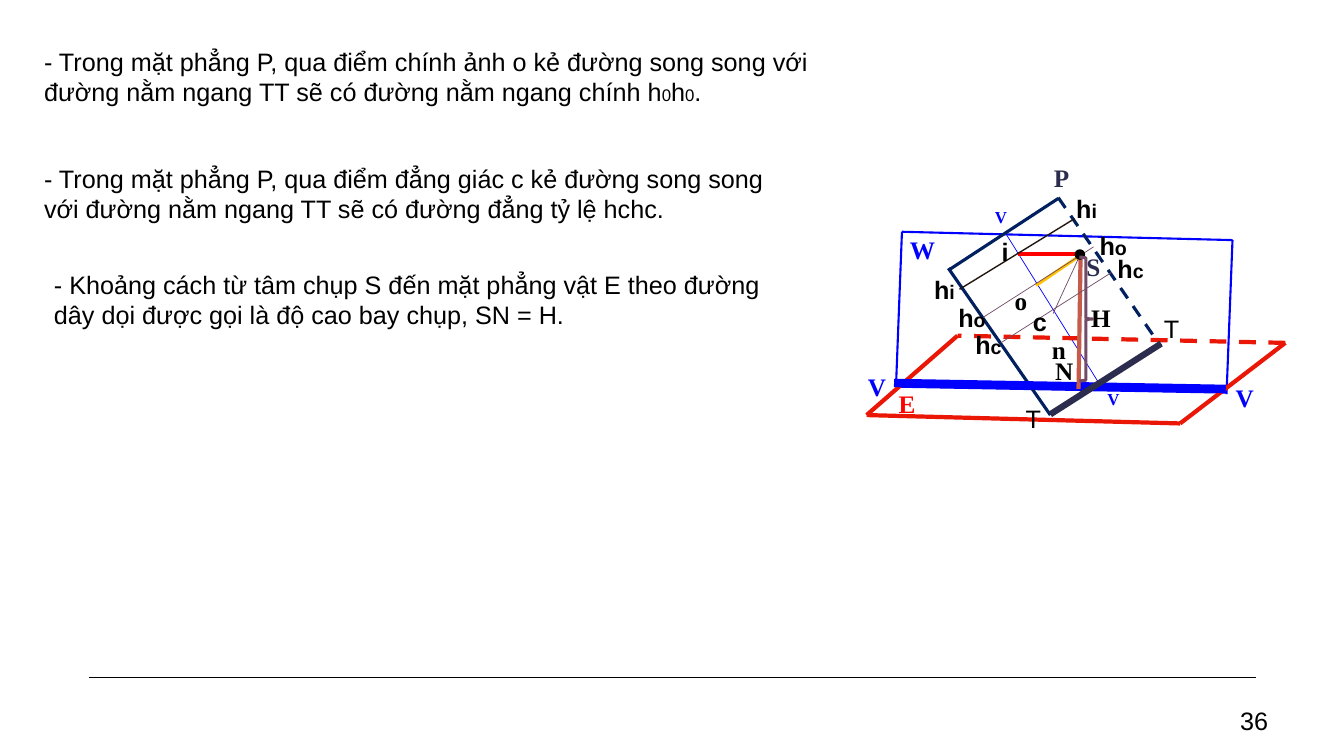
from dataclasses import dataclass

from lxml import etree
from pptx import Presentation
from pptx.dml.color import RGBColor
from pptx.enum.dml import MSO_LINE
from pptx.enum.shapes import MSO_CONNECTOR, MSO_SHAPE
from pptx.enum.text import MSO_ANCHOR, PP_ALIGN
from pptx.oxml.ns import qn
from pptx.util import Cm, Pt

STRAIGHT = MSO_CONNECTOR.STRAIGHT
DASH = MSO_LINE.DASH
OVAL = MSO_SHAPE.OVAL
RIGHT_BRACE = MSO_SHAPE.RIGHT_BRACE
MIDDLE = MSO_ANCHOR.MIDDLE
LEFT, RIGHT = PP_ALIGN.LEFT, PP_ALIGN.RIGHT


@dataclass(frozen=True)
class Theme:
    """Colours, fonts and type sizes of the slide."""
    black: str = "000000"
    blue: str = "0000FF"
    red: str = "FF0000"
    ground: str = "EA1606"
    navy: str = "002060"
    slate: str = "2C2C4E"
    plum: str = "734B67"
    brown: str = "211710"
    rust: str = "C55C4B"
    gold: str = "FFC000"
    sans: str = "Arial"
    serif: str = "Times New Roman"
    body: int = 18
    suffix: int = 14
    small: int = 12


THEME = Theme()


def rgb(colour):
    """Return a colour object for a hex string."""
    return RGBColor.from_string(colour)


def add_line(slide, origin, ends, colour, weight, dash=None):
    """Draw a straight line between two points measured from the origin."""
    (left, top), (x1, y1, x2, y2) = origin, ends
    line = slide.shapes.add_connector(
        STRAIGHT, Cm(left + x1), Cm(top + y1), Cm(left + x2), Cm(top + y2))
    line.line.color.rgb = rgb(colour)
    line.line.width = Pt(weight)
    if dash:
        line.line.dash_style = dash
    etree.SubElement(line._element.spPr, qn("a:effectLst"))


def add_text(slide, box, runs, font=THEME.sans, colour=THEME.black,
             bold=False, wrap=True, align=LEFT):
    """Write one paragraph made of (text, size) runs and return its frame."""
    frame = slide.shapes.add_textbox(*map(Cm, box)).text_frame
    frame.word_wrap = wrap
    paragraph = frame.paragraphs[0]
    paragraph.alignment = align
    paragraph.font.name = font
    paragraph.font.bold = bold
    paragraph.font.color.rgb = rgb(colour)
    sizes = {size for _, size in runs}
    if len(sizes) == 1:
        paragraph.font.size = Pt(sizes.pop())
    for text, size in runs:
        run = paragraph.add_run()
        run.text = text
        if len(runs) > 1:
            run.font.size = Pt(size)
    return frame


def add_explanations(slide, left, top):
    """Place the three explanations down the left side."""
    body, small = THEME.body, THEME.small
    explanations = [
        (0, 0, 19.86, [
            ("- Trong mặt phẳng P, qua điểm chính ảnh o kẻ đường song song với "
             "đường nằm ngang TT sẽ có đường nằm ngang chính h", body),
            ("0", small), ("h", body), ("0", small), (".", body)]),
        (0, 2.95, 18.9, [
            ("- Trong mặt phẳng P, qua điểm đẳng giác c kẻ đường song song với "
             "đường nằm ngang TT sẽ có đường đẳng tỷ lệ hchc.", body)]),
        (0.25, 5.61, 18.64, [
            ("- Khoảng cách từ tâm chụp S đến mặt phẳng vật E theo đường "
             "dây dọi được gọi là độ cao bay chụp, SN = H.", body)]),
    ]
    for x, y, width, runs in explanations:
        add_text(slide, (left + x, top + y, width, 1.8), runs)


def add_projection_lines(slide, origin):
    """Draw the planes W, E and P with the rays between them."""
    t = THEME
    vertical_plane = [
        ((1.13, 1.94, 0.98, 5.83), t.blue, 1.5),
        ((9.46, 2.15, 9.31, 6.03), t.blue, 1.5),
        ((1.13, 1.94, 9.46, 2.15), t.blue, 1.5),
        ((0.98, 5.83, 9.31, 5.98), t.blue, 2.25),
        ((3.75, 1.99, 6.14, 5.83), t.blue, 0.5),
    ]
    ground_plane = [
        ((2.53, 4.56, 0.24, 6.56), t.ground, 3),
        ((8.14, 6.77, 0.24, 6.56), t.ground, 3),
        ((8.14, 6.77, 10.79, 4.74), t.ground, 3),
        ((10.79, 4.74, 2.53, 4.56), t.ground, 3, DASH),
    ]
    image_plane = [
        ((2.3, 2.86, 4.87, 6.56), t.navy, 2.25),
        ((2.3, 2.91, 5.07, 1.1), t.navy, 2.25),
        ((4.89, 6.56, 7.66, 4.76), t.navy, 2.25),
        ((5.07, 1.08, 7.64, 4.81), t.navy, 2.25, DASH),
    ]
    traces = [
        ((0.93, 5.75, 9.29, 5.9), t.blue, 6),
        ((4.87, 6.54, 7.66, 4.76), t.slate, 4.5),
    ]
    rays = [
        ((5.53, 2.6, 4.51, 3.29), t.gold, 2.25),
        ((5.63, 2.63, 5.58, 5.9), t.rust, 3),
        ((4.05, 2.5, 5.73, 2.5), t.red, 2.25),
        ((5.63, 2.5, 4.94, 4), t.plum, 0.5),
    ]
    horizontals = [
        ((2.58, 3.39, 5.48, 1.61), t.brown, 1),
        ((3.17, 4.1, 5.96, 2.32), t.plum, 0.5),
        ((3.62, 4.74, 6.42, 2.96), t.plum, 0.5),
    ]
    for part in (vertical_plane, ground_plane, image_plane, traces, rays, horizontals):
        for line in part:
            add_line(slide, origin, *line)


def add_projection_labels(slide, origin):
    """Name the planes, points and lines of the drawing."""
    t = THEME
    left, top = origin
    letters = [
        ("W", 1.08, 1.87, 1.14, t.serif, t.blue, True, t.body),
        ("V", 3.22, 1.18, 0.81, t.serif, t.blue, True, t.small),
        ("V", 6.06, 5.78, 0.81, t.serif, t.blue, True, t.small),
        ("V", 9.29, 5.6, 0.97, t.serif, t.blue, True, t.body),
        ("V", 0.02, 5.32, 0.97, t.serif, t.blue, True, t.body),
        ("E", 0.8, 5.75, 0.94, t.serif, t.red, True, t.body),
        ("P", 4.71, 0.06, 0.94, t.serif, t.slate, True, t.body),
        ("S", 5.53, 2.32, 0.86, t.serif, t.slate, True, t.body),
        ("T", 7.48, 3.87, 0.94, t.sans, t.black, False, t.body),
        ("T", 4, 6.13, 0.94, t.sans, t.black, False, t.body),
        ("o", 3.72, 3.16, 0.84, t.serif, t.black, True, t.body),
        ("n", 4.66, 4.41, 0.86, t.serif, t.black, True, t.body),
        ("H", 5.65, 3.59, 1.02, t.serif, t.black, True, t.body),
        ("N", 4.74, 4.94, 0.97, t.serif, t.black, True, t.body),
        ("i", 3.39, 1.92, 0.69, t.sans, t.black, True, t.body),
        ("c", 4.18, 3.69, 0.86, t.sans, t.black, True, t.body),
    ]
    for letter, x, y, width, font, colour, bold, size in letters:
        height = 1.02 if size == t.body else 0.76
        add_text(slide, (left + x, top + y, width, height), [(letter, size)],
                 font, colour, bold, wrap=False)

    horizontal_ends = [
        ("i", 1.04, (1.69, 2.88), (5.27, 0.85)),
        ("o", 1.2, (2.3, 3.59), (5.86, 1.79)),
        ("c", 1.17, (2.73, 4.28), (6.31, 2.35)),
    ]
    for suffix, width, *ends in horizontal_ends:
        for x, y in ends:
            add_text(slide, (left + x, top + y, width, 1.02),
                     [("h", t.body), (suffix, t.suffix)], bold=True, wrap=False)


def add_projection(slide, left, top):
    """Draw the projection diagram with its centre, height brace and labels."""
    origin = left, top
    add_projection_lines(slide, origin)

    centre = slide.shapes.add_shape(
        OVAL, Cm(left + 5.5), Cm(top + 2.4), Cm(0.23), Cm(0.23))
    centre.fill.solid()
    centre.fill.fore_color.rgb = rgb(THEME.black)
    flight_height = slide.shapes.add_shape(
        RIGHT_BRACE, Cm(left + 5.6), Cm(top + 2.58), Cm(0.33), Cm(3.12))
    flight_height.fill.background()
    outlines = (centre, THEME.black, 1), (flight_height, THEME.plum, 2.25)
    for mark, colour, weight in outlines:
        mark.shadow.inherit = False
        mark.line.color.rgb = rgb(colour)
        mark.line.width = Pt(weight)

    add_projection_labels(slide, origin)


def add_footer(slide, left, top, width):
    """Rule off the foot of the slide and set the page number."""
    add_line(slide, (left, top), (0, 0, width, 0), THEME.black, 1)
    page = add_text(slide, (left + width - 1.32, top + 0.58, 1.88, 1.02),
                    [("36", THEME.body)], align=RIGHT)
    page.vertical_anchor = MIDDLE


def main():
    """Build and save the slide."""
    deck = Presentation()
    deck.slide_width, deck.slide_height = Cm(33.87), Cm(19.05)
    slide = deck.slides.add_slide(deck.slide_layouts[6])
    add_footer(slide, 2.24, 17.07, 29.41)
    add_explanations(slide, 0.86, 1.04)
    add_projection(slide, 21.6, 3.9)
    deck.save("out.pptx")


if __name__ == "__main__":
    main()
